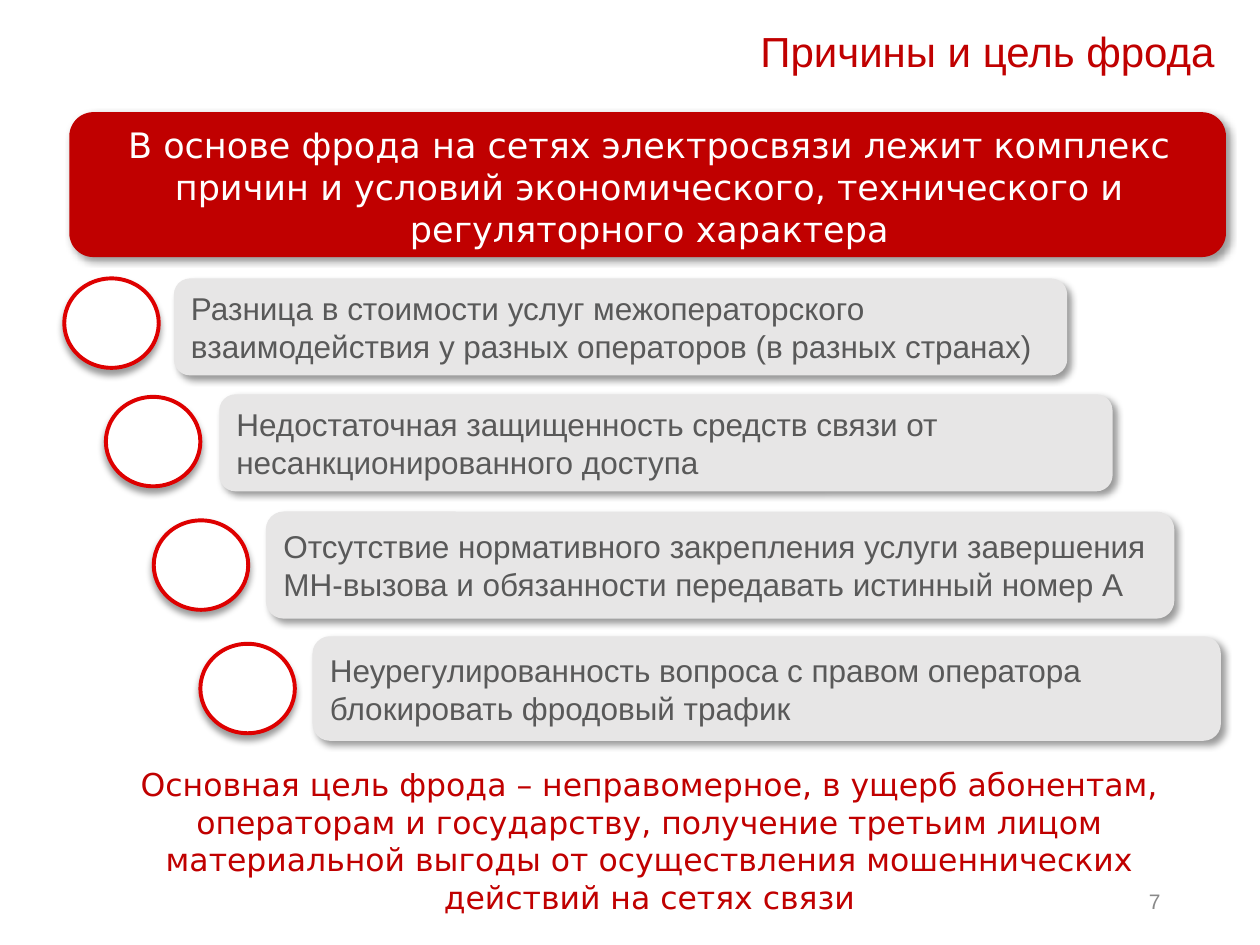
from lxml import etree
from pptx import Presentation
from pptx.dml.color import RGBColor
from pptx.enum.shapes import MSO_SHAPE as Shape
from pptx.enum.text import MSO_ANCHOR as Anchor, MSO_AUTO_SIZE as AutoSize, PP_ALIGN as Align
from pptx.oxml import parse_xml
from pptx.oxml.ns import nsdecls
from pptx.util import Inches, Pt

WHITE = RGBColor(0xFF, 0xFF, 0xFF)
DARK_RED = RGBColor(0xC0, 0x00, 0x00)
RING_RED = RGBColor(0xDE, 0x00, 0x00)
PANEL_GRAY = RGBColor(0xE7, 0xE6, 0xE6)
TEXT_GRAY = RGBColor(0x59, 0x59, 0x59)
NUMBER_GRAY = RGBColor(0x89, 0x89, 0x89)

prs = Presentation()
prs.slide_width, prs.slide_height = Inches(10), Inches(7.5)
slide = prs.slides.add_slide(prs.slide_layouts[6])


def add_shadowed(kind, box, fill, angle):
    """Add a borderless filled shape whose shadow falls at the angle in degrees."""
    shape = slide.shapes.add_shape(kind, *map(Inches, box))
    shape.fill.solid()
    shape.fill.fore_color.rgb = fill
    shape.line.fill.background()
    shape.shadow.inherit = False
    effects = shape._element.spPr.find("{*}effectLst")
    effects.append(parse_xml(
        f'<a:outerShdw {nsdecls("a")} blurRad="{Pt(4)}" dist="{Pt(3)}" '
        f'dir="{angle * 60000}" algn="t" rotWithShape="0">'
        '<a:srgbClr val="000000"><a:alpha val="40000"/></a:srgbClr></a:outerShdw>'))
    return shape


def write(frame, lines, align, anchor, **font_format):
    frame.word_wrap = True
    frame.vertical_anchor = anchor
    for index, line in enumerate(lines):
        paragraph = frame.add_paragraph() if index else frame.paragraphs[0]
        paragraph.alignment = align
        run = paragraph.add_run()
        run.text = line
        run.font.color.rgb = font_format["color"]
        for name in ("name", "size"):
            setattr(run.font, name, font_format[name])


add_shadowed(Shape.ROUNDED_RECTANGLE, (0.55, 0.89, 9.18, 1.15), DARK_RED, 45)

# Box, lines, alignment, font, size, colour
captions = [
    ((3.18, 0.15, 6.56, 0.5), ["Причины и цель фрода"], Align.RIGHT, "Arial", 24, DARK_RED),
    ((0.62, 0.93, 9.07, 1.11),
     ["В основе фрода на сетях электросвязи лежит комплекс причин и условий "
      "экономического, технического и", "регуляторного характера"],
     Align.CENTER, "DejaVu Sans", 20, WHITE),
    ((0.58, 6.02, 9.15, 1.01),
     ["Основная цель фрода – неправомерное, в ущерб абонентам, операторам и государству, "
      "получение третьим лицом материальной выгоды от осуществления мошеннических "
      "действий на сетях связи"],
     Align.CENTER, "DejaVu Sans", 18, DARK_RED),
]
for box, lines, align, font, size, color in captions:
    caption = slide.shapes.add_textbox(*map(Inches, box)).text_frame
    write(caption, lines, align, Anchor.TOP, name=font, size=Pt(size), color=color)
    caption.auto_size = AutoSize.SHAPE_TO_FIT_TEXT

page_number = slide.shapes.add_textbox(Inches(8.81), Inches(6.95), Inches(0.5), Inches(0.4))
write(page_number.text_frame, ["7"], Align.RIGHT, Anchor.MIDDLE,
      name="Arial", size=Pt(12), color=NUMBER_GRAY)

# Ring left and top, panel box, text
reasons = [
    (0.51, 2.21, (1.38, 2.21, 7.09, 0.77),
     "Разница в стоимости услуг межоператорского взаимодействия у разных операторов "
     "(в разных странах)"),
    (0.84, 3.15, (1.74, 3.13, 7.09, 0.77),
     "Недостаточная защищенность средств связи от несанкционированного доступа"),
    (1.22, 4.13, (2.11, 4.06, 7.21, 0.85),
     "Отсутствие нормативного закрепления услуги завершения МН-вызова и обязанности "
     "передавать истинный номер А"),
    (1.59, 5.11, (2.48, 5.05, 7.21, 0.83),
     "Неурегулированность вопроса с правом оператора блокировать фродовый трафик"),
]
for ring_left, ring_top, panel_box, reason in reasons:
    ring = add_shadowed(Shape.OVAL, (ring_left, ring_top, 0.75, 0.71), WHITE, 90)
    ring.line.color.rgb = RING_RED
    ring.line.width = Pt(2.25)
    panel = add_shadowed(Shape.ROUNDED_RECTANGLE, panel_box, PANEL_GRAY, 45)
    write(panel.text_frame, [reason], Align.LEFT, Anchor.MIDDLE,
          name="Arial", size=Pt(18), color=TEXT_GRAY)

prs.save("out.pptx")
